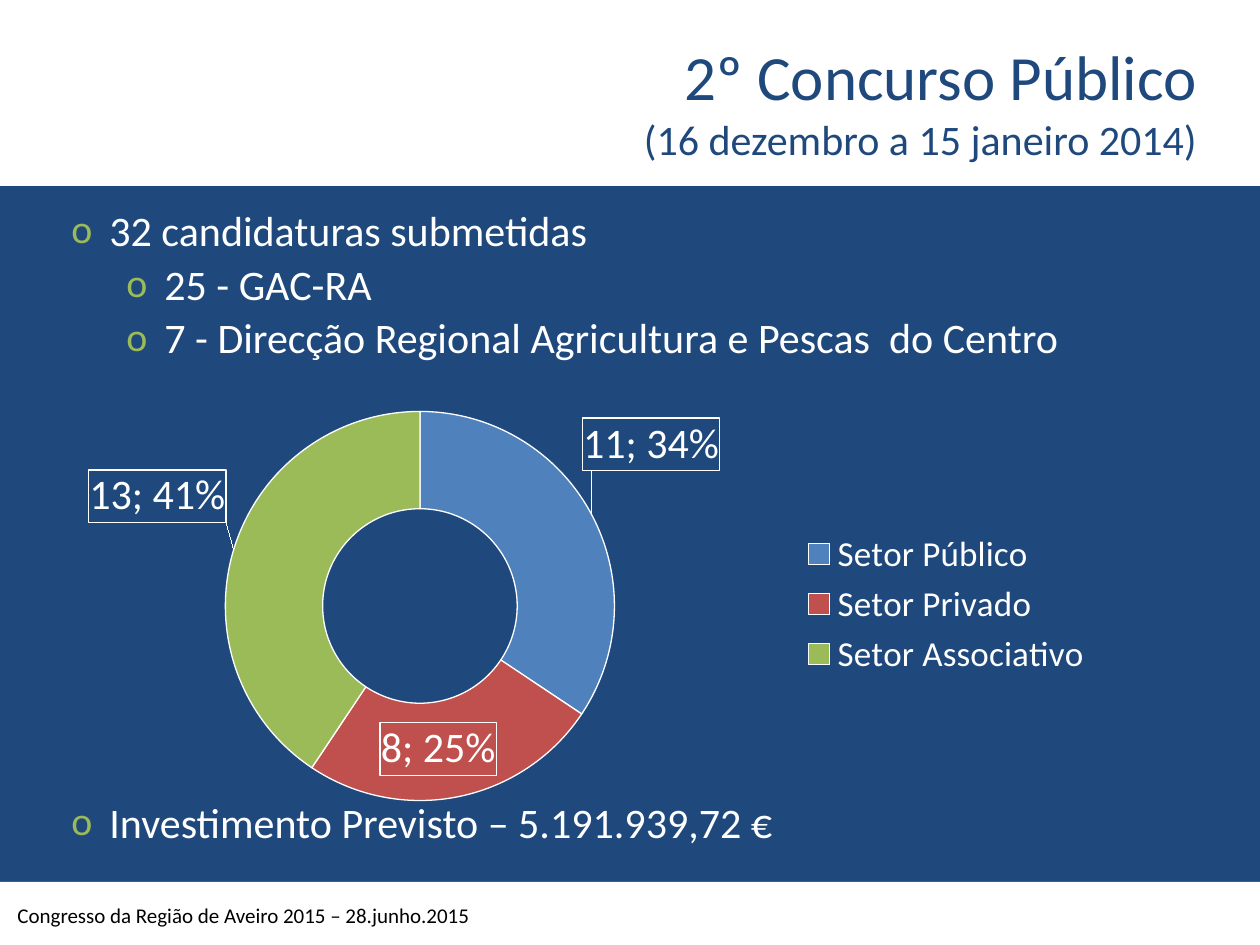
from lxml.etree import SubElement
from pptx import Presentation
from pptx.chart.data import CategoryChartData
from pptx.dml.color import RGBColor
from pptx.enum.chart import XL_CHART_TYPE, XL_LEGEND_POSITION
from pptx.enum.shapes import MSO_SHAPE
from pptx.enum.text import MSO_ANCHOR, PP_ALIGN
from pptx.oxml import parse_xml
from pptx.oxml.ns import nsdecls, qn
from pptx.util import Emu, Pt

COLORS = {
    "navy": "1F497D", "white": "FFFFFF", "black": "000000",
    "blue": "4F81BD", "red": "C0504D", "green": "9BBB59",
}
FONT = "Calibri"
SECTORS = [
    ("Setor Público", 11, "blue", (0.1, -0.22)),
    ("Setor Privado", 8, "red", (-0.01, 0)),
    ("Setor Associativo", 13, "green", (-0.12, -0.16)),
]


def px(length):
    """Turn pixels into EMU."""
    return Emu(round(length * 914400 / 126))


def color(name):
    """Look up a named colour."""
    return RGBColor.from_string(COLORS[name])


def style_font(font, size, name):
    """Set face, size and colour of a font."""
    font.name = FONT
    font.size = Pt(size)
    font.color.rgb = color(name)


def add_span(para, text, size, name):
    """Add one styled run to a paragraph."""
    span = para.add_run()
    span.text = text
    style_font(span.font, size, name)


def add_frame(page, box, anchor=MSO_ANCHOR.TOP):
    """Add a wrapping text box and return its frame."""
    frame = page.shapes.add_textbox(*map(px, box)).text_frame
    frame.word_wrap = True
    frame.vertical_anchor = anchor
    return frame


def add_band(page, box):
    """Draw a plain white band."""
    band = page.shapes.add_shape(MSO_SHAPE.RECTANGLE, *map(px, box))
    band.shadow.inherit = False
    band.fill.solid()
    band.fill.fore_color.rgb = color("white")
    band.line.fill.background()


def add_header(page, box):
    """Draw the top band with the title and its dates."""
    left, top, width, height = box
    add_band(page, box)
    title_box = left + 64, top + 6, width - 127, height - 28
    frame = add_frame(page, title_box, MSO_ANCHOR.BOTTOM)
    frame.margin_left = frame.margin_right = frame.margin_bottom = 0
    para = frame.paragraphs[0]
    para.alignment = PP_ALIGN.RIGHT
    add_span(para, "2º Concurso Público", 36, "navy")
    para.add_line_break()
    add_span(para, "(16 dezembro a 15 janeiro 2014)", 24, "navy")


def add_footer(page, box):
    """Draw the bottom band with the event line."""
    left, top, width, height = box
    add_band(page, box)
    frame = add_frame(page, (left + 5, top + 8, 551, 50), MSO_ANCHOR.MIDDLE)
    add_span(frame.paragraphs[0], "Congresso da Região de Aveiro 2015 – 28.junho.2015", 12, "black")


def add_bullets(page, box, items):
    """Write a list of (level, text) bullets."""
    frame = add_frame(page, box)
    for index, (level, text) in enumerate(items):
        para = frame.add_paragraph() if index else frame.paragraphs[0]
        para.level = level
        para.line_spacing = 0.9
        para.space_before = Pt(4.8 if index else 0)
        properties = para._p.get_or_add_pPr()
        properties.set("marL", str(px(38 + 55 * level)))
        properties.set("indent", str(px(-38)))
        bullet_color = SubElement(properties, qn("a:buClr"))
        SubElement(bullet_color, qn("a:srgbClr"), val=COLORS["green"])
        SubElement(properties, qn("a:buSzPct"), val="95000")
        SubElement(properties, qn("a:buFont"), typeface=FONT)
        SubElement(properties, qn("a:buChar"), char="o")
        add_span(para, text, 24, "white")


def manual_layout(**values):
    """Build a manual chart layout from its values."""
    parts = "".join(f'<c:{key} val="{value}"/>' for key, value in values.items())
    return parse_xml(f'<c:layout {nsdecls("c")}><c:manualLayout>{parts}</c:manualLayout></c:layout>')


def show_value_and_percent(labels):
    """Make a label element show value and percentage."""
    labels.find(qn("c:showVal")).set("val", "1")
    labels.find(qn("c:showPercent")).set("val", "1")
    separator = parse_xml(f'<c:separator {nsdecls("c")}>; </c:separator>')
    labels.find(qn("c:showBubbleSize")).addnext(separator)


def style_slice(series, index, fill, offset):
    """Colour one slice and place its framed label."""
    point = series.points[index]
    point.format.fill.solid()
    point.format.fill.fore_color.rgb = color(fill)
    point.format.line.color.rgb = color("white")
    point.format.line.width = Pt(0.75)
    style_font(point.data_label.font, 24, "white")
    label = series._element.findall(f'{qn("c:dLbls")}/{qn("c:dLbl")}')[index]
    label.find(qn("c:idx")).addnext(manual_layout(x=offset[0], y=offset[1]))
    label.find(qn("c:txPr")).addprevious(parse_xml(
        f'<c:spPr {nsdecls("c", "a")}><a:noFill/><a:ln w="9525"><a:solidFill>'
        f'<a:srgbClr val="{COLORS["white"]}"/></a:solidFill></a:ln></c:spPr>'))
    show_value_and_percent(label)


def add_sector_chart(page, box):
    """Draw the doughnut of applications by sector."""
    names, values, fills, offsets = zip(*SECTORS)
    data = CategoryChartData()
    data.categories = names
    data.add_series("Series 1", values)
    chart = page.shapes.add_chart(XL_CHART_TYPE.DOUGHNUT, *map(px, box), data).chart
    style_font(chart.font, 18, "white")
    chart.has_title = False
    chart.has_legend = True
    chart.legend.position = XL_LEGEND_POSITION.RIGHT
    chart.legend.include_in_layout = False
    style_font(chart.legend.font, 20, "white")
    plot = chart.plots[0]
    plot.vary_by_categories = True
    series = plot.series[0]
    series.format.line.color.rgb = color("white")
    series.format.line.width = Pt(0.75)
    style_font(series.data_labels.font, 24, "white")
    show_value_and_percent(series._element.find(qn("c:dLbls")))
    for index, (fill, offset) in enumerate(zip(fills, offsets)):
        style_slice(series, index, fill, offset)
    area = chart._chartSpace.find(f'{qn("c:chart")}/{qn("c:plotArea")}')
    for layout in area.findall(qn("c:layout")):
        area.remove(layout)
    area.insert(0, manual_layout(
        layoutTarget="inner", xMode="edge", yMode="edge", x=0.14, y=0.04, w=0.38, h=0.93))


def build_page(page):
    """Fill the slide from back to front."""
    page.background.fill.solid()
    page.background.fill.fore_color.rgb = color("navy")
    add_footer(page, (0, 882, 1260, 63))
    add_header(page, (0, 0, 1260, 186))
    add_bullets(page, (59, 204, 1138, 180), [
        (0, "32 candidaturas submetidas"),
        (1, "25 - GAC-RA"),
        (1, "7 - Direcção Regional Agricultura e Pescas  do Centro"),
    ])
    add_sector_chart(page, (82, 393, 1024, 422))
    add_bullets(page, (59, 796, 1138, 64), [(0, "Investimento Previsto – 5.191.939,72 €")])


def main():
    """Build and save the deck."""
    deck = Presentation()
    deck.slide_width, deck.slide_height = px(1260), px(945)
    build_page(deck.slides.add_slide(deck.slide_layouts[6]))
    deck.save("out.pptx")


if __name__ == "__main__":
    main()
